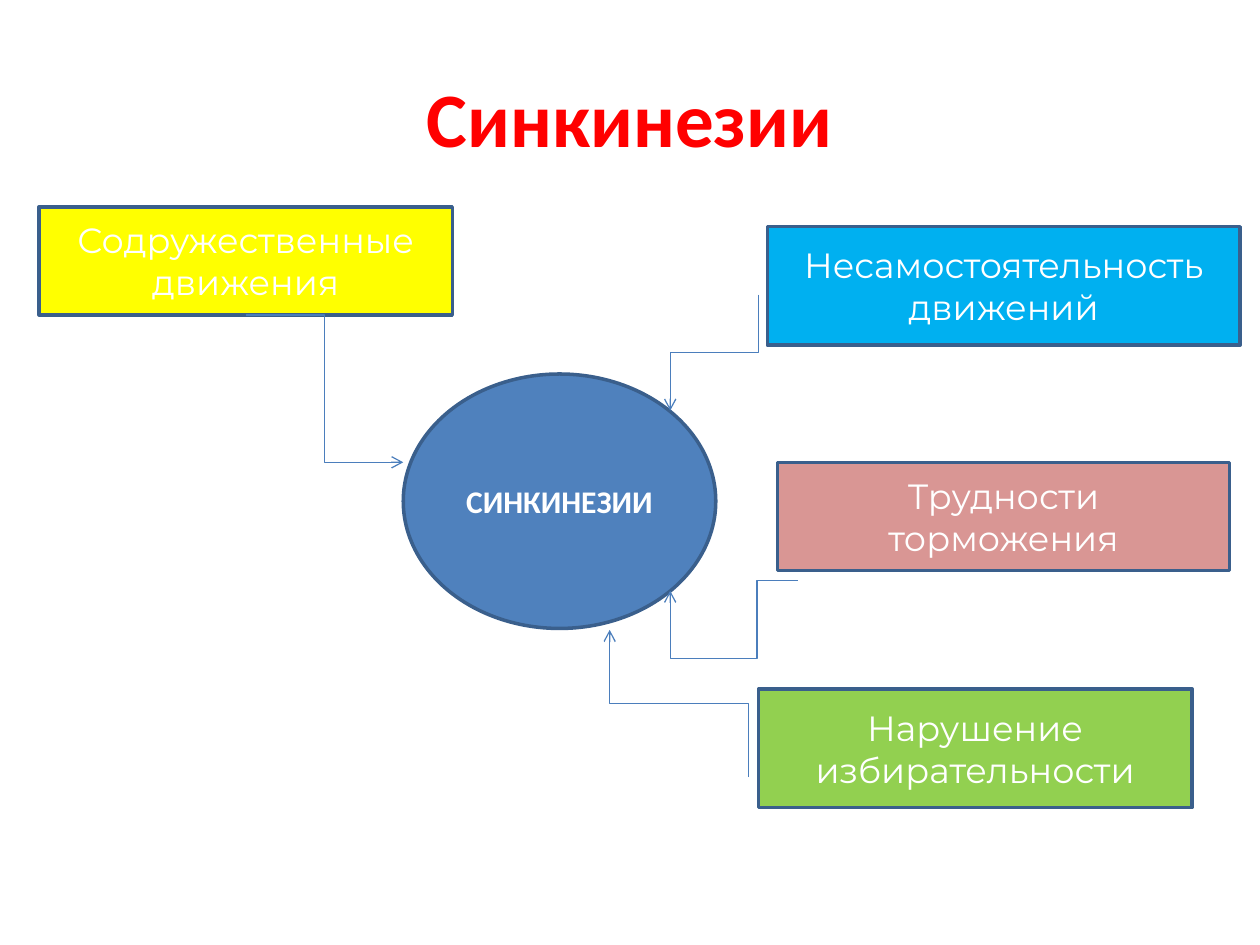
"""Builds the slide on synkinesis: a central oval and four linked boxes."""
from math import cos, radians, sin

from lxml.etree import SubElement
from pptx import Presentation
from pptx.dml.color import RGBColor
from pptx.enum.shapes import MSO_CONNECTOR, MSO_SHAPE
from pptx.enum.text import MSO_ANCHOR, PP_ALIGN
from pptx.oxml.ns import qn
from pptx.util import Cm, Pt

COLORS = {
    "title": "FF0000", "text": "FFFFFF", "outline": "3A5F8C", "link": "4B7EBC",
    "center": "4F81BD", "yellow": "FFFF00", "sky": "00B0F0",
    "rose": "D99694", "green": "92D050",
}
TITLE = ("Синкинезии", (1.27, 0.76, 22.86, 3.18))
CENTER = ("СИНКИНЕЗИИ", (8.13, 7.54, 6.3, 5.13))
SIGNS = [
    ("Содружественные движения", "yellow", (0.79, 4.17, 8.33, 2.18)),
    ("Несамостоятельность движений", "sky", (15.47, 4.57, 9.53, 2.39)),
    ("Трудности торможения", "rose", (15.67, 9.32, 9.12, 2.18)),
    ("Нарушение избирательности", "green", (15.29, 13.89, 8.74, 2.39)),
]
LINKS = [
    ((4.95, 6.35), (8.13, 9.32), 0, (0.5,)),
    ((15.29, 5.94), (13.51, 8.28), 90, (0.5,)),
    ((16.08, 11.71), (13.51, 11.91), 180, (0.32, 7.83)),
    ((15.09, 15.67), (12.29, 12.7), 270, (0.5,)),
]


def rgb(name):
    return RGBColor.from_string(COLORS[name])


def write(shape, words, *, size, font="Calibri", color="text", bold=False):
    frame = shape.text_frame
    frame.word_wrap = True
    frame.vertical_anchor = MSO_ANCHOR.MIDDLE
    paragraph = frame.paragraphs[0]
    paragraph.alignment = PP_ALIGN.CENTER
    run = paragraph.add_run()
    run.text = words
    run.font.size = Pt(size)
    run.font.name = font
    run.font.bold = bold
    run.font.color.rgb = rgb(color)


def add_block(slide, kind, place, fill):
    block = slide.shapes.add_shape(kind, *map(Cm, place))
    block.shadow.inherit = False
    block.fill.solid()
    block.fill.fore_color.rgb = rgb(fill)
    block.line.color.rgb = rgb("outline")
    block.line.width = Pt(2)
    return block


def add_link(slide, start, end, turn, bends):
    middle_x, middle_y = [(a + b) / 2 for a, b in zip(start, end)]
    half_x, half_y = [(b - a) / 2 for a, b in zip(start, end)]
    cosine, sine = cos(radians(turn)), sin(radians(turn))
    reach_x = half_x * cosine + half_y * sine
    reach_y = half_y * cosine - half_x * sine
    link = slide.shapes.add_connector(
        MSO_CONNECTOR.ELBOW,
        Cm(middle_x - reach_x), Cm(middle_y - reach_y),
        Cm(middle_x + reach_x), Cm(middle_y + reach_y))
    link.line.color.rgb = rgb("link")
    link.line.width = Pt(0.75)
    properties = link._element.spPr
    if turn:
        properties.find(qn("a:xfrm")).set("rot", str(turn * 60000))
    geometry = properties.find(qn("a:prstGeom"))
    geometry.set("prst", f"bentConnector{len(bends) + 2}")
    guides = geometry.find(qn("a:avLst"))
    for number, bend in enumerate(bends, 1):
        SubElement(guides, qn("a:gd"), name=f"adj{number}",
                   fmla=f"val {round(bend * 100000)}")
    SubElement(properties.find(qn("a:ln")), qn("a:tailEnd"), type="arrow")
    SubElement(properties, qn("a:effectLst"))


def main():
    deck = Presentation()
    deck.slide_width, deck.slide_height = Cm(25.4), Cm(19.05)
    slide = deck.slides.add_slide(deck.slide_layouts[6])

    heading, place = TITLE
    write(slide.shapes.add_textbox(*map(Cm, place)), heading,
          size=44, color="title", bold=True)

    topic, place = CENTER
    write(add_block(slide, MSO_SHAPE.OVAL, place, "center"), topic,
          size=18, bold=True)

    for sign, fill, place in SIGNS:
        write(add_block(slide, MSO_SHAPE.RECTANGLE, place, fill), sign,
              size=20, font="Montserrat")

    for link in LINKS:
        add_link(slide, *link)

    deck.save("out.pptx")


if __name__ == "__main__":
    main()
